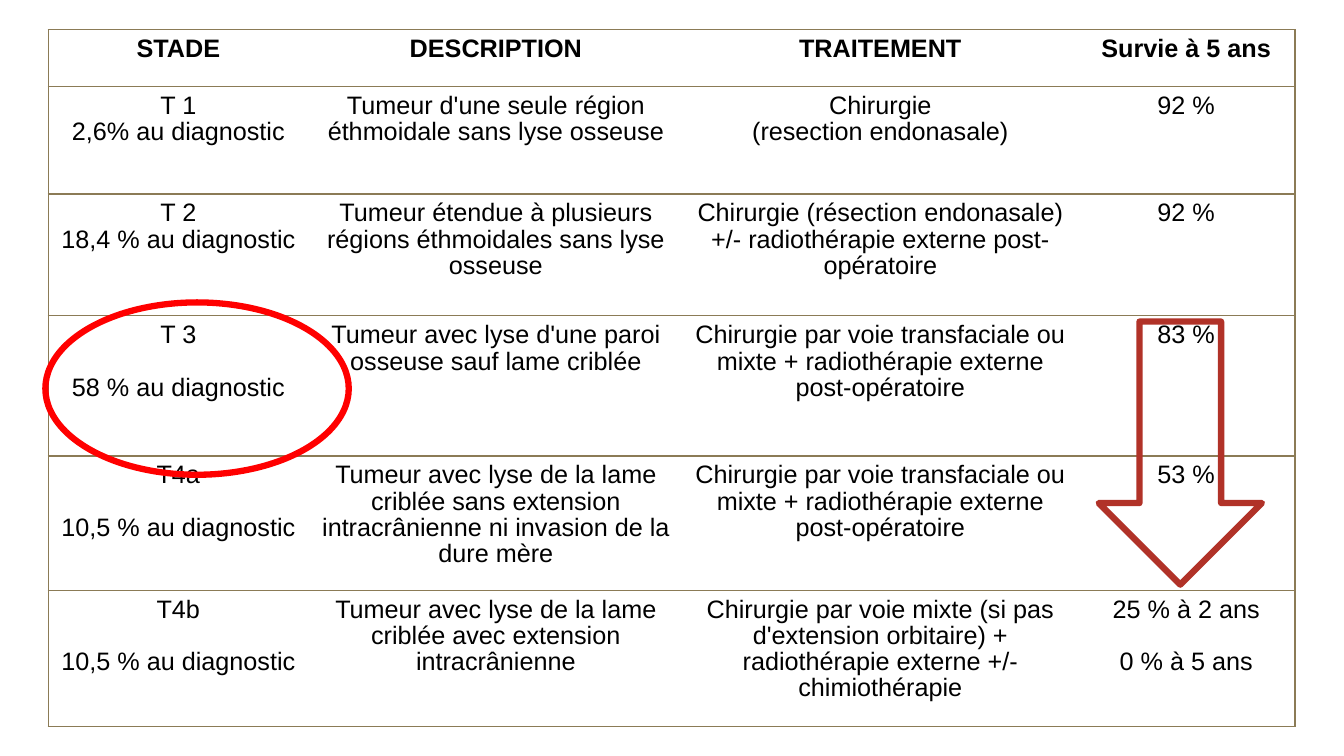
from lxml import etree
from pptx import Presentation
from pptx import util as u
from pptx.dml.color import RGBColor
from pptx.enum import shapes, text
from pptx.oxml import ns

COLS = [185.8, 267.8, 281.5, 155.5]
ROWS = [40.3, 77, 87.1, 100.1, 95.8, 97.2]
T3_T4A_CARE = "Chirurgie par voie transfaciale ou mixte + radiothérapie externe post-opératoire"
STAGES = [
    ["STADE", "DESCRIPTION", "TRAITEMENT", "Survie à 5 ans"],
    ["T 1\n2,6% au diagnostic",
     "Tumeur d'une seule région éthmoidale sans lyse osseuse",
     "Chirurgie\n(resection endonasale)", "92 %"],
    ["T 2\n18,4 % au diagnostic",
     "Tumeur étendue à plusieurs régions éthmoidales sans lyse osseuse",
     "Chirurgie (résection endonasale) +/- radiothérapie externe post-opératoire", "92 %"],
    ["T 3\n58 % au diagnostic",
     "Tumeur avec lyse d'une paroi osseuse sauf lame criblée", T3_T4A_CARE, "83 %"],
    ["T4a\n10,5 % au diagnostic",
     "Tumeur avec lyse de la lame criblée sans extension intracrânienne ni invasion de la dure mère",
     T3_T4A_CARE, "53 %"],
    ["T4b\n10,5 % au diagnostic",
     "Tumeur avec lyse de la lame criblée avec extension intracrânienne",
     "Chirurgie par voie mixte (si pas d'extension orbitaire) + radiothérapie externe +/- chimiothérapie",
     "25 % à 2 ans\n0 % à 5 ans"],
]
FIRST_SPACED_ROW = 3


def color(value):
    return RGBColor.from_string(value)


def apply(target, values):
    for name, value in values.items():
        setattr(target, name, value)


class Deck:
    font = {"name": "Arial", "size": u.Pt(18)}
    para = {"alignment": text.PP_ALIGN.CENTER, "line_spacing": 0.93}
    margins = {"margin_left": u.Pt(7.2), "margin_right": u.Pt(7.2),
               "margin_top": u.Pt(5), "margin_bottom": u.Pt(3.6)}
    ink, paper, rule = "000000", "FFFFFF", "8B7B56"
    gap = u.Pt(18.8)

    def __init__(self, width, height):
        self.prs = Presentation()
        apply(self.prs, {"slide_width": u.Pt(width), "slide_height": u.Pt(height)})
        self.slide = self.prs.slides.add_slide(self.prs.slide_layouts[6])

    def borders(self, cell, sides):
        tcPr = cell._tc.get_or_add_tcPr()
        for i, side in enumerate("LRTB"):
            ln = etree.Element(ns.qn("a:ln" + side), w=str(u.Pt(1)))
            if side in sides:
                fill = etree.SubElement(ln, ns.qn("a:solidFill"))
                etree.SubElement(fill, ns.qn("a:srgbClr"), val=self.rule)
            else:
                etree.SubElement(ln, ns.qn("a:noFill"))
            tcPr.insert(i, ln)

    def cell(self, cell, content, bold, spaced):
        apply(cell, self.margins)
        cell.fill.solid()
        cell.fill.fore_color.rgb = color(self.paper)
        tf = cell.text_frame
        tf.text = content
        for i, p in enumerate(tf.paragraphs):
            apply(p, self.para)
            if i and spaced:
                p.space_before = self.gap
            for r in p.runs:
                apply(r.font, {**self.font, "bold": bold})
                r.font.color.rgb = color(self.ink)

    def table(self, left, top, cols, rows, data):
        frame = self.slide.shapes.add_table(
            len(rows), len(cols), u.Pt(left), u.Pt(top), u.Pt(sum(cols)), u.Pt(sum(rows)))
        tbl = frame.table
        apply(tbl, {"first_row": False, "horz_banding": False})
        for column, width in zip(tbl.columns, cols):
            column.width = u.Pt(width)
        for row, height in zip(tbl.rows, rows):
            row.height = u.Pt(height)
        for i, line in enumerate(data):
            for j, content in enumerate(line):
                cell = tbl.cell(i, j)
                self.cell(cell, content, i == 0, i >= FIRST_SPACED_ROW)
                sides = "TB" + ("L" if j == 0 else "") + ("R" if j == len(cols) - 1 else "")
                self.borders(cell, sides)

    def outline(self, kind, left, top, width, height, line):
        sp = self.slide.shapes.add_shape(kind, u.Pt(left), u.Pt(top), u.Pt(width), u.Pt(height))
        sp.shadow.inherit = False
        sp.fill.background()
        sp.line.color.rgb = color(line)
        sp.line.width = u.Pt(4.5)


def main():
    deck = Deck(960, 540)
    deck.table(34.5, 21.3, COLS, ROWS, STAGES)
    deck.outline(shapes.MSO_SHAPE.OVAL, 32.4, 216, 216.7, 123.1, "FF0000")
    deck.outline(shapes.MSO_SHAPE.DOWN_ARROW, 784.8, 229.7, 116.6, 187.9, "B13228")
    deck.prs.save("out.pptx")


if __name__ == "__main__":
    main()
